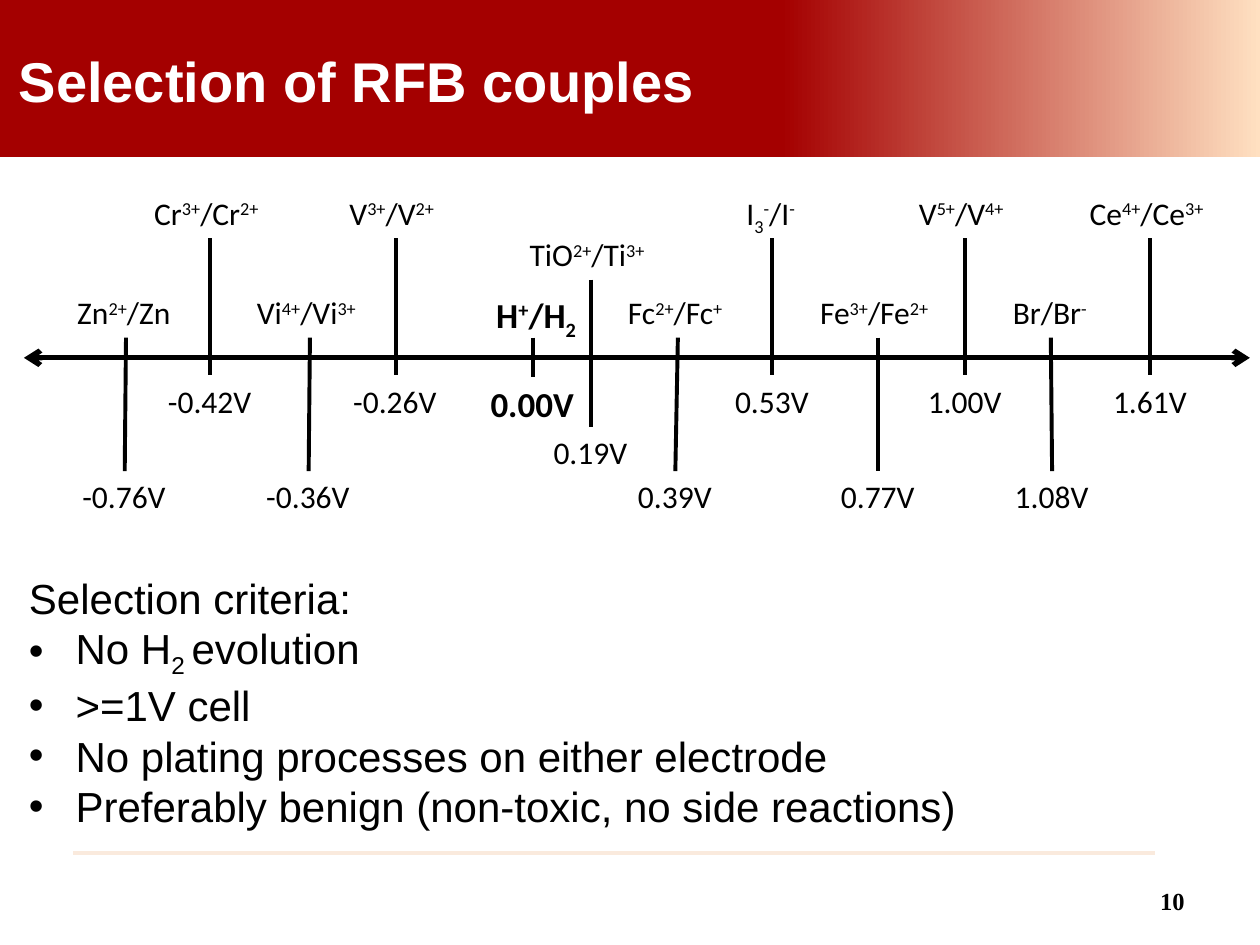
from lxml import etree
from pptx import Presentation
from pptx.dml.color import RGBColor
from pptx.enum.shapes import MSO_CONNECTOR, MSO_SHAPE
from pptx.enum.text import MSO_ANCHOR, MSO_AUTO_SIZE, PP_ALIGN
from pptx.oxml.ns import qn
from pptx.util import Inches, Pt

STRAIGHT = MSO_CONNECTOR.STRAIGHT
RECTANGLE = MSO_SHAPE.RECTANGLE
TOP, MIDDLE = MSO_ANCHOR.TOP, MSO_ANCHOR.MIDDLE
GROW = MSO_AUTO_SIZE.SHAPE_TO_FIT_TEXT
LEFT, RIGHT = PP_ALIGN.LEFT, PP_ALIGN.RIGHT

# Tick start and end, measured down from the top of the diagram
HIGH, MID, LOW, REFERENCE = (0.41, 1.5), (0.74, 1.91), (1.2, 2.26), (1.2, 1.51)

# Couple, potential, tick x at top and bottom, label width, level
COUPLES = [
    ("Zn|^2+|/Zn", "-0.76V", 0.81, 0.8, 0.97, LOW),
    ("Cr|^3+|/Cr|^2+", "-0.42V", 1.48, 1.48, 1.09, HIGH),
    ("Vi|^4+|/Vi|^3+", "-0.36V", 2.27, 2.26, 1.04, LOW),
    ("V|^3+|/V|^2+", "-0.26V", 2.95, 2.95, 0.93, HIGH),
    ("TiO|^2+|/Ti|^3+", "0.19V", 4.5, 4.5, 1.17, MID),
    ("Fc|^2+|/Fc|^+", "0.39V", 5.19, 5.17, 0.99, LOW),
    ("I|_3|^-|/I|^-", "0.53V", 5.94, 5.94, 0.61, HIGH),
    ("Fe|^3+|/Fe|^2+", "0.77V", 6.78, 6.78, 1.12, LOW),
    ("V|^5+|/V|^4+", "1.00V", 7.47, 7.47, 0.93, HIGH),
    ("Br/Br|^-", "1.08V", 8.15, 8.16, 0.8, LOW),
    ("Ce|^4+|/Ce|^3+", "1.61V", 8.94, 8.94, 1.16, HIGH),
]
CRITERIA = [
    "No H|_2 |evolution",
    ">=1V cell",
    "No plating processes on either electrode",
    "Preferably benign (non-toxic, no side reactions)",
]


def rgb(color):
    return RGBColor.from_string(color)


def write(p, text, size=18, font="Calibri", color="000000", bold=False, align=LEFT):
    """Write runs parted by |; a leading ^ raises a run and _ lowers it."""
    p.alignment = align
    for part in text.split("|"):
        r = p.add_run()
        r.text = part.lstrip("^_")
        r.font.size, r.font.name, r.font.bold = Pt(size), font, bold
        r.font.color.rgb = rgb(color)
        if part[0] in "^_":
            baseline = "30000" if part[0] == "^" else "-25000"
            r._r.get_or_add_rPr().set("baseline", baseline)


def place(sp, left, top, width, height):
    sp.left, sp.top = Inches(left), Inches(top)
    sp.width, sp.height = Inches(width), Inches(height)


def add_line(shapes, x1, y1, x2, y2, color="000000", width=2.25, arrows=False):
    line = shapes.add_connector(STRAIGHT, *map(Inches, (x1, y1, x2, y2)))
    line.line.color.rgb, line.line.width = rgb(color), Pt(width)
    etree.SubElement(line._element.spPr, qn("a:effectLst"))
    if arrows:
        ln = line.line._get_or_add_ln()
        for end in ("a:headEnd", "a:tailEnd"):
            etree.SubElement(ln, qn(end), type="arrow")


def add_label(shapes, text, center, top, width, height, **style):
    box = shapes.add_textbox(*map(Inches, (center - width / 2, top, width, height)))
    tf = box.text_frame
    tf.word_wrap, tf.auto_size = False, GROW
    write(tf.paragraphs[0], text, **style)


def add_header(slide, left, top, width, height):
    band = slide.shapes.add_shape(RECTANGLE, *map(Inches, (left, top, width, height)))
    band.shadow.inherit = False
    band.line.fill.background()
    band.fill.gradient()
    band.fill.gradient_angle = 0
    stops = zip(band.fill.gradient_stops, [(0.62, "A40000"), (1, "FFE0C1")])
    for stop, (position, color) in stops:
        stop.position, stop.color.rgb = position, rgb(color)
    slide.shapes._spTree.insert(2, band._element)  # behind the title

    title = slide.shapes.title
    place(title, left + 0.05, top + 0.28, width, 0.64)
    tf = title.text_frame
    tf.vertical_anchor, tf.auto_size, tf.word_wrap = TOP, GROW, True
    p = tf.paragraphs[0]
    p.line_spacing, p.space_after = 1.07, Pt(8)
    write(p, "Selection of RFB couples", size=32, font="Arial", color="FFFFFF", bold=True)


def add_couple(shapes, left, top, couple, height=0.4, shift=0, **style):
    name, potential, x1, x2, width, (start, end) = couple
    add_line(shapes, left + x1, top + start, left + x2, top + end)
    add_label(shapes, name, left + x1 + shift, top + start - 0.4, width, height, **style)
    value_width = 0.87 if potential.startswith("-") or style else 0.79
    add_label(shapes, potential, left + x2, top + end, value_width, height, **style)


def add_potential_scale(slide, left, top, width):
    shapes = slide.shapes.add_group_shape().shapes
    axis = top + 1.36
    add_line(shapes, left, axis, left + width, axis, width=3, arrows=True)
    hydrogen = ("H|^+|/H|_2", "0.00V", 4.04, 4.04, 0.86, REFERENCE)
    add_couple(shapes, left, top, hydrogen, height=0.44, shift=0.04, size=20, bold=True)
    for couple in COUPLES:
        add_couple(shapes, left, top, couple)


def add_criteria(slide, left, top, width, height):
    body = slide.placeholders[1]
    place(body, left, top, width, height)
    tf = body.text_frame
    tf.vertical_anchor, tf.auto_size, tf.word_wrap = TOP, GROW, True
    for i, text in enumerate(["Selection criteria:"] + CRITERIA):
        p = tf.add_paragraph() if i else tf.paragraphs[0]
        pPr = p._p.get_or_add_pPr()
        indent = Inches(0.37) if i else 0
        pPr.set("marL", str(indent))
        pPr.set("indent", str(-indent))
        if i:
            etree.SubElement(pPr, qn("a:buFont"), typeface="Arial")
            etree.SubElement(pPr, qn("a:buChar"), char="•")
        else:
            etree.SubElement(pPr, qn("a:buNone"))
        p.space_before = Pt(0)
        write(p, text, size=24, font="Arial")


def add_footer(slide, left, top, width):
    add_line(slide.shapes, left, top, left + width, top, color="FAEADD", width=2)
    box = slide.shapes.add_textbox(*map(Inches, (left + 6.59, top + 0.18, 2.33, 0.4)))
    tf = box.text_frame
    tf.word_wrap, tf.vertical_anchor = True, MIDDLE
    p = tf.paragraphs[0]
    write(p, "10", size=14, font="Times New Roman", bold=True, align=RIGHT)


def main():
    prs = Presentation()
    prs.slide_width, prs.slide_height = Inches(10), Inches(7.5)
    slide = prs.slides.add_slide(prs.slide_layouts[1])
    add_header(slide, 0, 0, 10, 1.25)
    add_footer(slide, 0.58, 6.77, 8.59)
    add_criteria(slide, 0.13, 4.49, 9.87, 2.12)
    add_potential_scale(slide, 0.19, 1.48, 9.73)
    prs.save("out.pptx")


if __name__ == "__main__":
    main()
